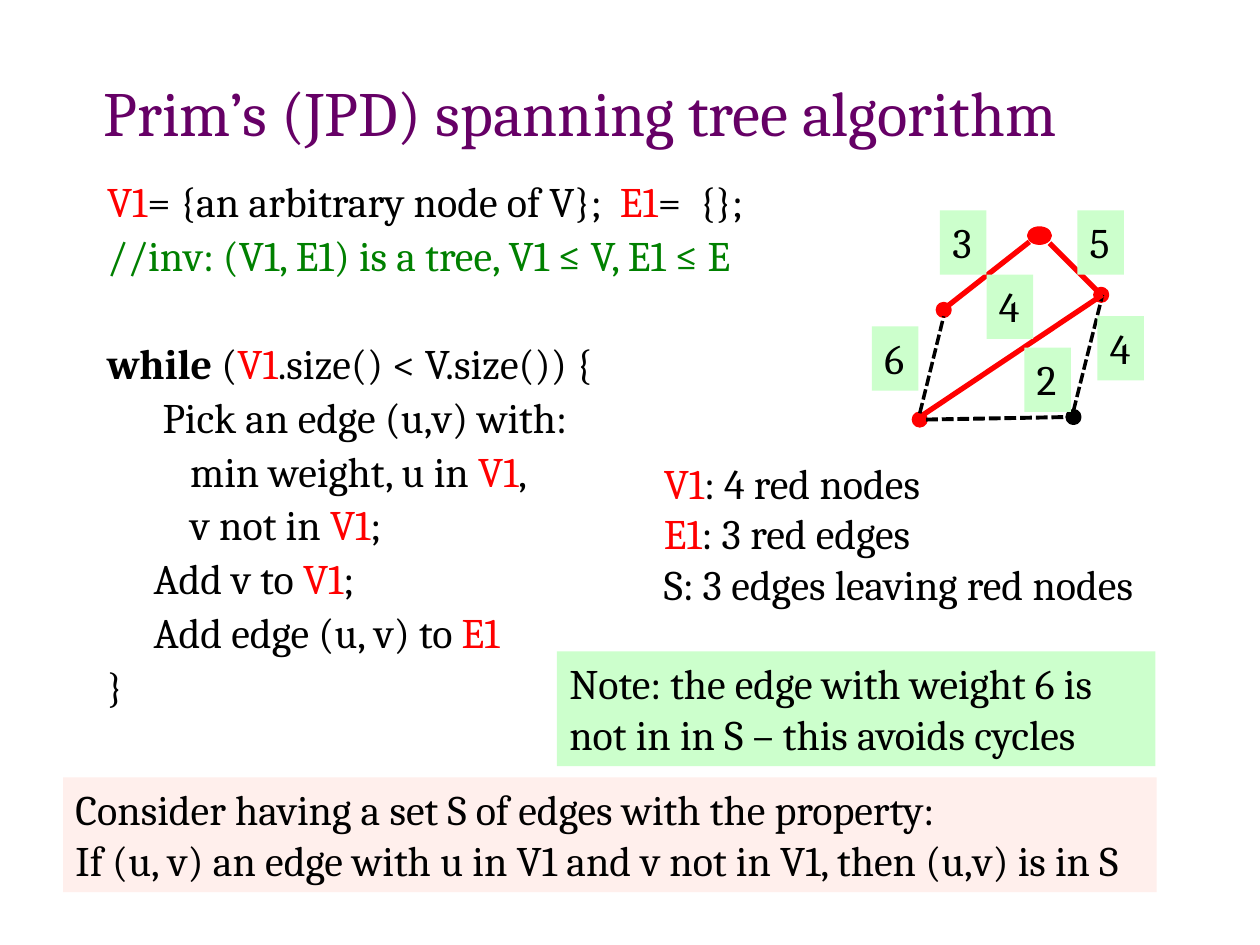
from pptx import Presentation
from pptx.util import Inches, Pt
from pptx.dml.color import RGBColor
from pptx.enum.dml import MSO_LINE as Dash
from pptx.enum.shapes import MSO_CONNECTOR as Conn, MSO_SHAPE as Kind
from pptx.enum.text import MSO_ANCHOR as Anchor, MSO_AUTO_SIZE as Auto, PP_ALIGN as Align
from pptx.oxml.xmlchemy import OxmlElement

FONT = "Cambria"
HUES = {"plum": "660066", "red": "FF0000", "green": "008000", "black": "000000",
        "mint": "CCFFCC", "pink": "FFEFEC"}

# Content: a line is a list of (text, colour) parts
V1, E1 = ("V1", "red"), ("E1", "red")


def ink(text):
    return text, "black"


TITLE = [[("Prim’s (JPD) spanning tree algorithm", "plum")]]

# Code: left indent, space before, parts
CODE = [
    (0, 2, [V1, ink("= {an arbitrary node of V};  "), E1, ink("=  {};")]),
    (0, 2, [("//inv: (V1, E1) is a tree, V1 ≤ V, E1 ≤ E", "green")]),
    (0, 33, [ink("while"), ink(" ("), V1, ink(".size() < V.size()) {")]),
    (0.44, 2, [ink("Pick an edge (u,v) with:")]),
    (0.66, 2, [ink("min weight, u in "), V1, ink(",")]),
    (0.66, 2, [ink("v not in "), V1, ink(";")]),
    (0.37, 2, [ink("Add v to "), V1, ink(";")]),
    (0.37, 2, [ink("Add edge (u, v) to "), E1]),
    (0, 2, [ink("}")]),
]

# Boxes: left, top, width, height, fill, lines
BOXES = [
    (0.5, 6.17, 8.68, 0.91, "pink", [
        [ink("Consider having a set S of edges with the property:")],
        [ink("If (u, v) an edge with u in V1 and v not in V1, then (u,v) is in S")]]),
    (5.17, 3.58, 4.08, 1.31, None, [
        [V1, ink(": 4 red nodes")],
        [E1, ink(": 3 red edges")],
        [ink("S: 3 edges leaving red nodes")]]),
    (4.42, 5.17, 4.75, 0.91, "mint", [
        [ink("Note: the edge with weight 6 is")],
        [ink("not in in S – this avoids cycles")]]),
]

# Graph: nodes (centre, size, colour), edges (ends, colour, width), weights
NODES = [
    (7.49, 2.46, 0.1, 0.1, "red"), (7.3, 3.33, 0.1, 0.1, "red"),
    (8.52, 3.31, 0.1, 0.1, "black"), (8.74, 2.34, 0.1, 0.1, "red"),
    (8.25, 1.87, 0.17, 0.12, "red"),
]
EDGES = [
    (7.3, 3.28, 7.49, 2.51, "black", 2), (8.52, 3.26, 8.75, 2.34, "black", 2),
    (8.33, 1.93, 8.7, 2.3, "red", 3), (7.52, 2.43, 8.17, 1.92, "red", 3),
    (7.33, 3.29, 8.75, 2.34, "red", 3), (7.35, 3.33, 8.47, 3.31, "black", 2.25),
]
COSTS = [("3", 7.46, 1.67), ("2", 8.13, 2.76), ("5", 8.55, 1.67),
         ("4", 8.71, 2.51), ("6", 6.92, 2.59), ("4", 7.83, 2.18)]


def hue(name):
    return RGBColor.from_string(HUES[name])


def write(frame, lines, size=24):
    for i, parts in enumerate(lines):
        para = frame.paragraphs[0] if i == 0 else frame.add_paragraph()
        para.alignment = Align.LEFT
        for text, name in parts:
            run = para.add_run()
            run.text = text
            run.font.name, run.font.size = FONT, Pt(size)
            run.font.bold = text == "while"
            run.font.color.rgb = hue(name)


def hold(shape, area):
    """Place a placeholder and set its margins."""
    shape.left, shape.top, shape.width, shape.height = map(Inches, area)
    frame = shape.text_frame
    frame.auto_size, frame.word_wrap = Auto.NONE, True
    frame.margin_left = frame.margin_top = frame.margin_bottom = Inches(0.06)
    frame.margin_right = Inches(0.1)
    return frame


def draw(kind, x, y, w, h, name, line=0):
    shape = slide.shapes.add_shape(kind, *map(Inches, (x, y, w, h)))
    shape.shadow.inherit = False
    shape.fill.solid()
    shape.fill.fore_color.rgb = hue(name)
    if line:
        shape.line.color.rgb = hue(name)
        shape.line.width = Pt(line)
    else:
        shape.line.fill.background()
    return shape


def note(x, y, w, h, fill, lines, wrap=True):
    if fill:
        shape = draw(Kind.RECTANGLE, x, y, w, h, fill)
    else:
        shape = slide.shapes.add_textbox(*map(Inches, (x, y, w, h)))
    frame = shape.text_frame
    frame.word_wrap, frame.vertical_anchor = wrap, Anchor.TOP
    write(frame, lines)


deck = Presentation()
deck.slide_width, deck.slide_height = Inches(10), Inches(7.5)
slide = deck.slides.add_slide(deck.slide_layouts[1])

# Title
frame = hold(slide.shapes.title, (0.75, 0.42, 7.75, 0.92))
frame.vertical_anchor = Anchor.MIDDLE
write(frame, TITLE, 36)
frame.paragraphs[0].alignment = Align.CENTER

# Code
frame = hold(slide.placeholders[1], (0.75, 1.33, 8.5, 5.33))
write(frame, [parts for _, _, parts in CODE])
for para, (left, gap, _) in zip(frame.paragraphs, CODE):
    para.space_before = Pt(gap)
    props = para._p.get_or_add_pPr()
    props.set("marL", str(Inches(0.04 + left)))
    props.set("indent", "0")
    props.append(OxmlElement("a:buNone"))

# Graph
for x, y, w, h, name in NODES:
    draw(Kind.OVAL, x - w / 2, y - h / 2, w, h, name, 2)
for *ends, name, width in EDGES:
    edge = slide.shapes.add_connector(Conn.STRAIGHT, *map(Inches, ends))
    edge.line.color.rgb = hue(name)
    edge.line.width = Pt(width)
    if name == "black":
        edge.line.dash_style = Dash.SQUARE_DOT
    edge._element.spPr.append(OxmlElement("a:effectLst"))
for cost, x, y in COSTS:
    note(x, y, 0.37, 0.51, "mint", [[ink(cost)]], wrap=False)

# Notes
for box in BOXES:
    note(*box)

deck.save("out.pptx")
